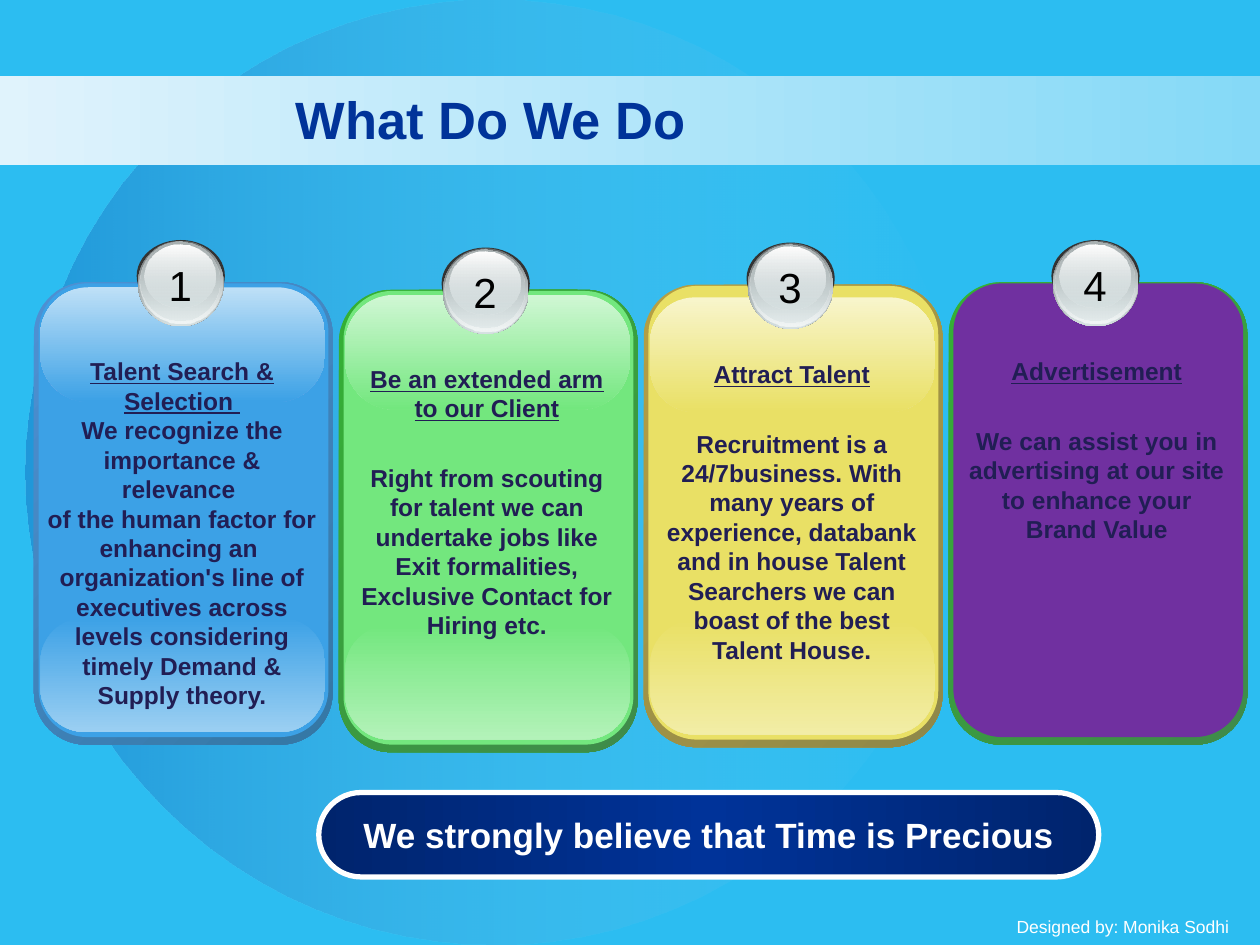
from lxml.etree import SubElement
from pptx import Presentation
from pptx.dml.color import RGBColor
from pptx.enum.shapes import MSO_SHAPE
from pptx.enum.text import MSO_ANCHOR, PP_ALIGN
from pptx.oxml.ns import qn
from pptx.util import Inches, Pt

SKY = RGBColor(0x2C, 0xBD, 0xF1)
PALE = RGBColor(0xE0, 0xF3, 0xFC)
AQUA = RGBColor(0x85, 0xD9, 0xF7)
NAVY = RGBColor(0x00, 0x33, 0x99)
DEEP = RGBColor(0x00, 0x24, 0x6D)
INK = RGBColor(0x21, 0x1E, 0x54)
WHITE = RGBColor(0xFF, 0xFF, 0xFF)
BLACK = RGBColor(0x00, 0x00, 0x00)
COAL = RGBColor(0x33, 0x33, 0x33)
SLATE = RGBColor(0x63, 0x68, 0x69)
STEEL = RGBColor(0xAA, 0xB2, 0xB3)
SILVER = RGBColor(0xD6, 0xE1, 0xE2)
FROST = RGBColor(0xF1, 0xF5, 0xF5)
BLUE = RGBColor(0x3C, 0xA1, 0xE6)
BLUE_RIM = RGBColor(0x4E, 0x91, 0xD4), RGBColor(0x34, 0x77, 0xA4)
BLUE_CAP = RGBColor(0xBE, 0xE0, 0xF7)
BLUE_FOOT = RGBColor(0x9B, 0xCF, 0xF2)
GREEN = RGBColor(0x73, 0xE7, 0x7E)
GREEN_RIM = RGBColor(0x34, 0xB0, 0x34), RGBColor(0x3F, 0x8B, 0x4A)
GREEN_CAP = RGBColor(0xD0, 0xF7, 0xD4)
GREEN_FOOT = RGBColor(0xB3, 0xF2, 0xB9)
GOLD = RGBColor(0xE9, 0xE0, 0x65)
GOLD_RIM = RGBColor(0xB5, 0x9F, 0x43), RGBColor(0x8F, 0x88, 0x49)
GOLD_CAP = RGBColor(0xF8, 0xF5, 0xCC)
GOLD_FOOT = RGBColor(0xF2, 0xED, 0xA6)
PLUM = RGBColor(0x70, 0x30, 0xA0)

OVAL, RECT, ROUND = MSO_SHAPE.OVAL, MSO_SHAPE.RECTANGLE, MSO_SHAPE.ROUNDED_RECTANGLE
LEFT, MID = PP_ALIGN.LEFT, PP_ALIGN.CENTER

BALL = [
    (0, 0, 7, 5.7, [COAL], 0),
    (0.1, 0.05, 6.8, 6.8, [SLATE, SILVER], 90),
    (0.2, 0.05, 6.6, 6.6, [(SILVER, 0), FROST], 90),
    (0.3, 0.15, 6.3, 6.2, [STEEL, (SILVER, 48)], 90),
    (0.65, 0.35, 5.6, 5, [WHITE, (SILVER, 38)], 90),
]

CARDS = [
    (22.4, BLUE_RIM, BLUE, (BLUE_CAP, 0.42, 0.4), BLUE_FOOT, 23.8,
     [[("Talent Search & Selection \n", True),
       ("We recognize the importance & relevance \nof the human factor for enhancing an \n"
        "organization's line of executives across levels considering timely "
        "Demand & Supply theory.", False)]]),
    (23, GREEN_RIM, GREEN, (GREEN_CAP, 0.43, 0.4), GREEN_FOOT, 22.7,
     [[("Be an extended arm to our Client", True)],
      [("Right from scouting for talent we can undertake jobs like Exit formalities, "
        "Exclusive Contact for Hiring etc.", False)]]),
    (22.6, GOLD_RIM, GOLD, (GOLD_CAP, 0.39, 1), GOLD_FOOT, 22.7,
     [[("Attract Talent", True)],
      [("Recruitment is a 24/7business. With many years of experience, databank and "
        "in house Talent Searchers we can boast of the best Talent House.", False)]]),
    (22.4, GREEN_RIM, PLUM, None, None, 22.7,
     [[("Advertisement", True)],
      [("We can assist you in advertising at our site to enhance your Brand Value", False)]]),
]


class Deck:
    font = "Arial"
    cols, rows = 100, 75

    def __init__(self):
        self.prs = Presentation()
        self.prs.slide_width, self.prs.slide_height = Inches(10), Inches(7.5)
        self.slide = self.prs.slides.add_slide(self.prs.slide_layouts[6])
        back = self.slide.background.fill
        back.solid()
        back.fore_color.rgb = SKY

    def area(self, x, y, w, h):
        col = self.prs.slide_width / self.cols
        row = self.prs.slide_height / self.rows
        return int(x * col), int(y * row), int(w * col), int(h * row)

    def shape(self, kind, box, tones, turn=0, bend=None):
        item = self.slide.shapes.add_shape(kind, *self.area(*box))
        item.shadow.inherit = False
        item.line.fill.background()
        if bend is not None:
            item.adjustments[0] = bend
        if len(tones) == 1:
            item.fill.solid()
            item.fill.fore_color.rgb = tones[0]
        else:
            self.blend(item, tones, turn)
        return item

    def blend(self, item, tones, turn):
        item.fill.gradient()
        item.fill.gradient_angle = (360 - turn) % 360
        stops = item._element.spPr.find(qn("a:gradFill")).find(qn("a:gsLst"))
        for old in list(stops):
            stops.remove(old)
        for i, tone in enumerate(tones):
            hue, alpha = (tone, 100) if isinstance(tone, RGBColor) else tone
            stop = SubElement(stops, qn("a:gs"), pos=str(100000 * i // (len(tones) - 1)))
            paint = SubElement(stop, qn("a:srgbClr"), val=str(hue))
            if alpha < 100:
                SubElement(paint, qn("a:alpha"), val=str(alpha * 1000))

    def words(self, frame, paras, size, tone, bold=False, align=MID, gap=0):
        for i, runs in enumerate(paras):
            para = frame.paragraphs[0] if i == 0 else frame.add_paragraph()
            para.alignment = align
            if i:
                para.space_before = Pt(gap)
            for piece, under in runs:
                for j, line in enumerate(piece.split("\n")):
                    if j:
                        para.add_line_break()
                    if line:
                        self.run(para, line, size, tone, bold, under)

    def run(self, para, line, size, tone, bold, under):
        run = para.add_run()
        run.text = line
        font = run.font
        font.name, font.size, font.bold = self.font, Pt(size), bold
        font.underline = under
        font.color.rgb = tone

    def text(self, box, paras, size, tone, wrap=True, anchor=MSO_ANCHOR.TOP, **style):
        frame = self.slide.shapes.add_textbox(*self.area(*box)).text_frame
        frame.word_wrap = wrap
        frame.vertical_anchor = anchor
        self.words(frame, paras, size, tone, **style)

    def ball(self, x, y, mark):
        for dx, dy, w, h, tones, turn in BALL:
            self.shape(OVAL, (x + dx, y + dy, w, h), tones, turn)
        self.text((x + 1.5, y + 1.05, 3.9, 5), [[(mark, False)]], 24, BLACK, wrap=False)

    def card(self, x, mark, y, rim, fill, cap, foot, wide, paras):
        self.shape(ROUND, (x, y, 23.7, 36.7), rim, 45, 0.175)
        self.shape(ROUND, (x + 0.37, y + 0.1, 23, 36), [fill], bend=0.167)
        if cap:
            tone, bend, drop = cap
            self.shape(ROUND, (x + 0.5, y + 26.6, 22.6, 9.1), [fill, foot], 90, 0.39)
            self.shape(ROUND, (x + 0.5, y + drop, 22.6, 9.1), [tone, fill], 90, bend)
        self.ball(x + 8.15, y - 3.35, mark)
        self.text((x + 11.75 - wide / 2, y + 5.4, wide, 29), paras, 14, INK, bold=True, gap=23)

    def pill(self, box, label):
        item = self.shape(ROUND, box, [DEEP, NAVY, DEEP], bend=0.5)
        item.line.color.rgb = WHITE
        item.line.width = Pt(3)
        frame = item.text_frame
        frame.word_wrap = False
        frame.vertical_anchor = MSO_ANCHOR.MIDDLE
        self.words(frame, [[(label, False)]], 20, WHITE, bold=True)


def main():
    deck = Deck()
    deck.shape(OVAL, (2, 0, 74.4, 75), [(NAVY, 27), (WHITE, 0)])
    deck.shape(RECT, (0, 6, 100, 7.1), [PALE, AQUA])
    deck.text((79.7, 72.2, 20.3, 2.8), [[("Designed by: Monika Sodhi", False)]],
              10, WHITE, align=LEFT)
    deck.text((22.5, 6.3, 69.2, 6.2), [[("What Do We Do", False)]], 30, NAVY,
              anchor=MSO_ANCHOR.MIDDLE, bold=True, align=LEFT)
    for i, card in enumerate(CARDS):
        deck.card(2.7 + 24.2 * i, str(i + 1), *card)
    deck.pill((25.3, 62.9, 61.9, 6.7), "We strongly believe that Time is Precious")
    deck.prs.save("out.pptx")


if __name__ == "__main__":
    main()
